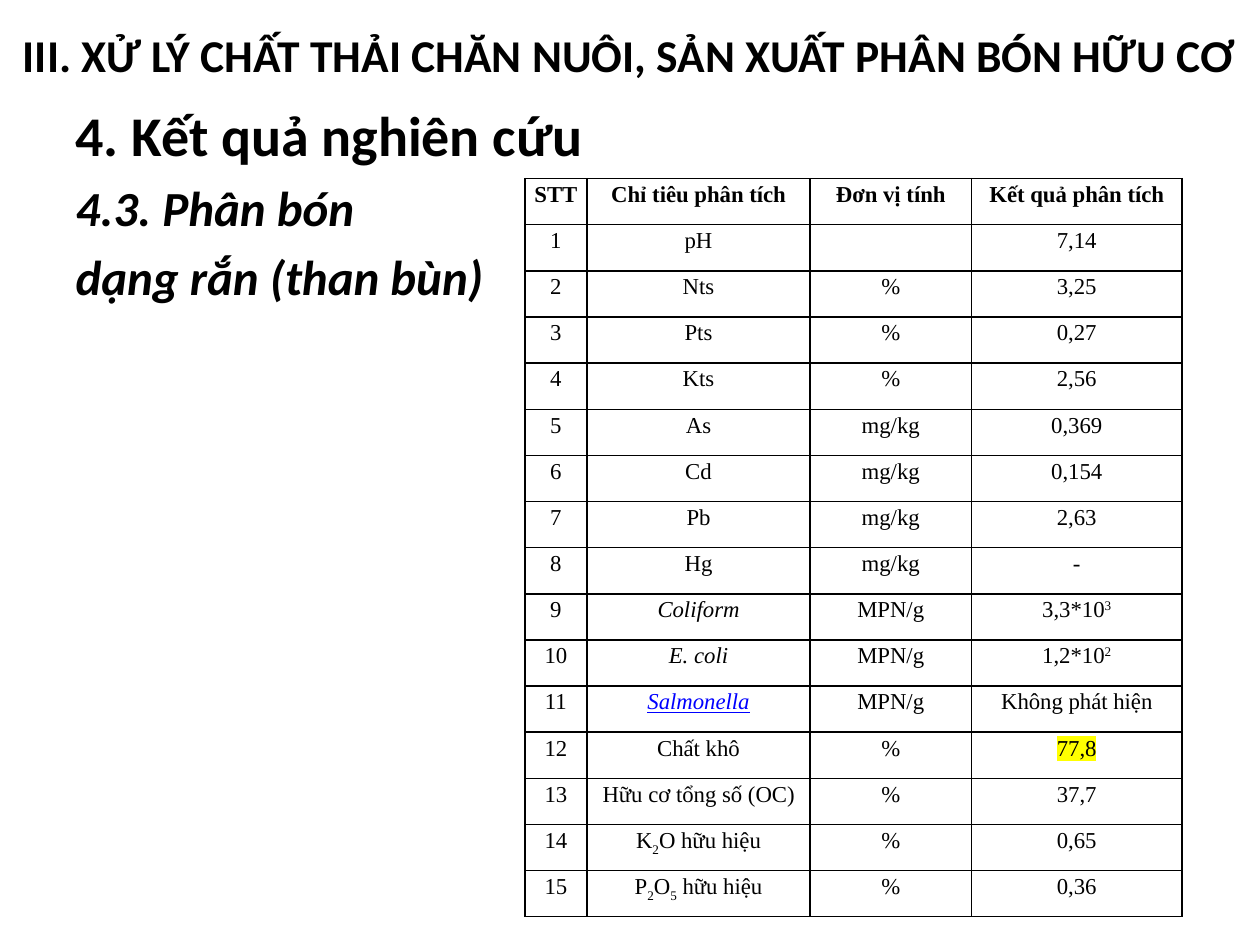
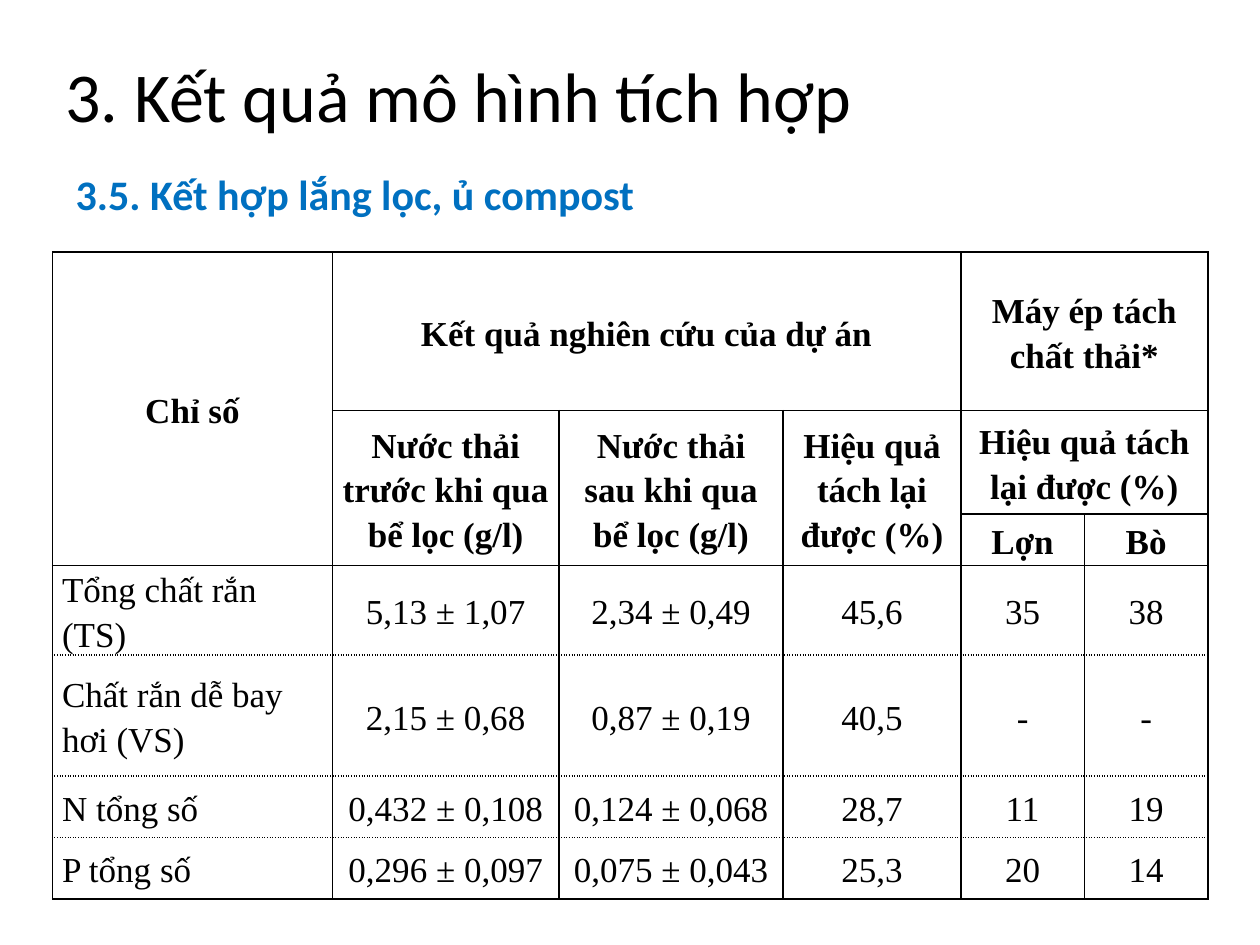
from lxml.etree import SubElement as Sub, Element as Elem
from pptx import Presentation as Deck
from pptx.dml.color import RGBColor as Rgb
from pptx.enum.text import MSO_ANCHOR as Anchor, MSO_AUTO_SIZE as Fit, PP_ALIGN as Align
from pptx.oxml.ns import qn
from pptx.util import Cm, Pt

INK = {"black": "000000", "blue": "0070C0", "link": "0000FF", "mark": "FFFF00"}
HEAD = {"name": "Calibri", "ink": "black"}
CELL = {"name": "Times New Roman", "ink": "black"}
SUP, LOW = {"base": 30000}, {"base": -25000}
ITAL = {"italic": True}

TESTS = [
    ("Chỉ tiêu phân tích", "Đơn vị tính", "Kết quả phân tích"),
    ("pH", "", "7,14"),
    ("Nts", "%", "3,25"),
    ("Pts", "%", "0,27"),
    ("Kts", "%", "2,56"),
    ("As", "mg/kg", "0,369"),
    ("Cd", "mg/kg", "0,154"),
    ("Pb", "mg/kg", "2,63"),
    ("Hg", "mg/kg", "-"),
    ([("Coliform", ITAL)], "MPN/g", [("3,3*10", {}), ("3", SUP)]),
    ([("E. coli", ITAL)], "MPN/g", [("1,2*10", {}), ("2", SUP)]),
    ([("Salmonella", {**ITAL, "underline": True, "ink": "link"})], "MPN/g", "Không phát hiện"),
    ("Chất khô", "%", [("77,8", {"mark": "mark"})]),
    ("Hữu cơ tổng số (OC)", "%", "37,7"),
    ([("K", {}), ("2", LOW), ("O hữu hiệu", {})], "%", "0,65"),
    ([("P", {}), ("2", LOW), ("O", {}), ("5", LOW), (" hữu hiệu", {})], "%", "0,36"),
]

YIELD = [
    ("Chỉ số", "Kết quả nghiên cứu của dự án", "", "", "Máy ép tách chất thải*", ""),
    ("", "Nước thải trước khi qua bể lọc (g/l)", "Nước thải sau khi qua bể lọc (g/l)",
     "Hiệu quả tách lại được (%)", "Hiệu quả tách lại được (%)", ""),
    ("", "", "", "", "Lợn", "Bò"),
    ("Tổng chất rắn (TS)", "5,13 ± 1,07", "2,34 ± 0,49", "45,6", "35", "38"),
    ("Chất rắn dễ bay hơi (VS)", "2,15 ± 0,68", "0,87 ± 0,19", "40,5", "-", "-"),
    ("N tổng số", "0,432 ± 0,108", "0,124 ± 0,068", "28,7", "11", "19"),
    ("P tổng số", "0,296 ± 0,097", "0,075 ± 0,043", "25,3", "20", "14"),
]
SPANS = [(0, 0, 2, 0), (0, 1, 0, 3), (0, 4, 0, 5), (1, 1, 2, 1),
         (1, 2, 2, 2), (1, 3, 2, 3), (1, 4, 1, 5)]
TOP = 3


def assign(item, **vals):
    """Set attributes of an item from a dict of values."""
    for key, val in vals.items():
        setattr(item, key, val)


def write(para, text, look):
    """Fill a paragraph with runs, each in the given look plus its own."""
    parts = [(text, {})] if isinstance(text, str) else text
    for words, extra in parts:
        run = para.add_run()
        run.text = words
        vals = {**look, **extra}
        ink, base, mark = (vals.pop(key, None) for key in ("ink", "base", "mark"))
        run.font.color.rgb = Rgb.from_string(INK[ink])
        assign(run.font, **vals)
        props = run._r.get_or_add_rPr()
        if base:
            props.set("baseline", str(base))
        if mark:
            light = Elem(qn("a:highlight"))
            Sub(light, qn("a:srgbClr"), val=INK[mark])
            props.find(qn("a:latin")).addprevious(light)


def place(shape, box):
    """Move a placeholder to a box in centimetres and return its text frame."""
    assign(shape, **dict(zip(("left", "top", "width", "height"), map(Cm, box))))
    frame = shape.text_frame
    assign(frame, word_wrap=True, auto_size=Fit.NONE)
    return frame


def add_title(slide, box, text, align, **look):
    """Write the slide title in its box."""
    frame = place(slide.shapes.title, box)
    frame.vertical_anchor = Anchor.MIDDLE
    para = frame.paragraphs[0]
    para.alignment = align
    write(para, text, {**HEAD, **look})


def add_body(slide, box, lines, **form):
    """Write unbulleted lines with a hanging indent in the body placeholder."""
    frame = place(slide.placeholders[1], box)
    for num, (text, look) in enumerate(lines):
        para = frame.add_paragraph() if num else frame.paragraphs[0]
        props = para._p.get_or_add_pPr()
        props.set("marL", str(Cm(0.95)))
        props.set("indent", str(-Cm(0.95)))
        Sub(props, qn("a:buNone"))
        assign(para, **form)
        if not num:
            para.space_before = Pt(0)
        write(para, text, {**HEAD, "bold": True, **look})


def edge(cell, dots=""):
    """Draw four thin cell borders, dotted on the sides named in dots."""
    props = cell._tc.get_or_add_tcPr()
    for side in "LRTB":
        line = Sub(props, qn(f"a:ln{side}"), w=str(Pt(1)))
        Sub(Sub(line, qn("a:solidFill")), qn("a:srgbClr"), val=INK["black"])
        Sub(line, qn("a:prstDash"), val="sysDot" if side in dots else "solid")


def add_grid(slide, spot, cols, rows, data, style):
    """Build a plain table; style gives dots, anchor, form and look of a cell."""
    left, top = spot
    size = map(Cm, (left, top, sum(cols), sum(rows)))
    grid = slide.shapes.add_table(len(rows), len(cols), *size).table
    assign(grid, first_row=False, horz_banding=False)
    for col, wide in zip(grid.columns, cols):
        col.width = Cm(wide)
    for row, high in zip(grid.rows, rows):
        row.height = Cm(high)
    for r, texts in enumerate(data):
        for c, text in enumerate(texts):
            cell = grid.cell(r, c)
            dots, anchor, form, look = style(r, c)
            edge(cell, dots)
            cell.fill.background()
            assign(cell, margin_left=Cm(0.19), margin_right=Cm(0.19), margin_top=0,
                   margin_bottom=0, vertical_anchor=anchor)
            if text:
                para = cell.text_frame.paragraphs[0]
                assign(para, line_spacing=1.15, **form)
                write(para, text, {**CELL, **look})
    return grid


def test_style(r, c):
    """Style a cell of the test table."""
    form = {"alignment": Align.CENTER, "space_after": Pt(6)}
    return "", Anchor.TOP, form, {"size": Pt(13), "bold": r == 0}


def yield_style(r, c):
    """Style a cell of the yield table, with dots between data rows."""
    head, last = r < TOP, len(YIELD) - 1
    dots = ("T" if r > TOP else "") + ("B" if TOP <= r < last else "")
    form = {"alignment": Align.CENTER if head or c else Align.LEFT,
            "space_after": Pt(10 if head else 0)}
    return dots, Anchor.MIDDLE, form, {"size": Pt(20), "bold": head}


def solid_slide(slide):
    """Build the slide on solid manure."""
    add_title(slide, (0, 0, 25.4, 2.2),
              "III. XỬ LÝ CHẤT THẢI CHĂN NUÔI, SẢN XUẤT PHÂN BÓN HỮU CƠ",
              Align.CENTER, size=Pt(26), bold=True)
    sub = {"size": Pt(28), "italic": True}
    add_body(slide, (1.27, 1.9, 23.5, 15.88), [
        ("4. Kết quả nghiên cứu", {"size": Pt(32)}),
        ("4.3. Phân bón", sub),
        ("dạng rắn (than bùn)", sub)])
    data = [(str(num or "STT"), *row) for num, row in enumerate(TESTS)]
    add_grid(slide, (10.58, 3.6), (1.25, 4.5, 3.25, 4.25), [0.93] * len(data),
             data, test_style)


def yield_slide(slide):
    """Build the slide on settling, filtering and compost."""
    add_title(slide, (1.06, 0.64, 23.07, 2.54), "3. Kết quả mô hình tích hợp",
              Align.LEFT, size=Pt(40))
    add_body(slide, (1.27, 3.39, 22.86, 13.64), [
        ("3.5. Kết hợp lắng lọc, ủ compost", {"size": Pt(24), "ink": "blue"})],
        line_spacing=0.9)
    grid = add_grid(slide, (1.06, 5.08), (5.64, 4.57, 4.52, 3.58, 2.49, 2.49),
                    (3.2, 2.08, 1.04, 1.24, 2.44, 1.24, 1.24), YIELD, yield_style)
    for r, c, down, over in SPANS:
        grid.cell(r, c).merge(grid.cell(down, over))


def main():
    """Build and save the deck."""
    deck = Deck()
    assign(deck, slide_width=Cm(25.4), slide_height=Cm(19.05))
    for build in (solid_slide, yield_slide):
        build(deck.slides.add_slide(deck.slide_layouts[1]))
    deck.save("out.pptx")


if __name__ == "__main__":
    main()
